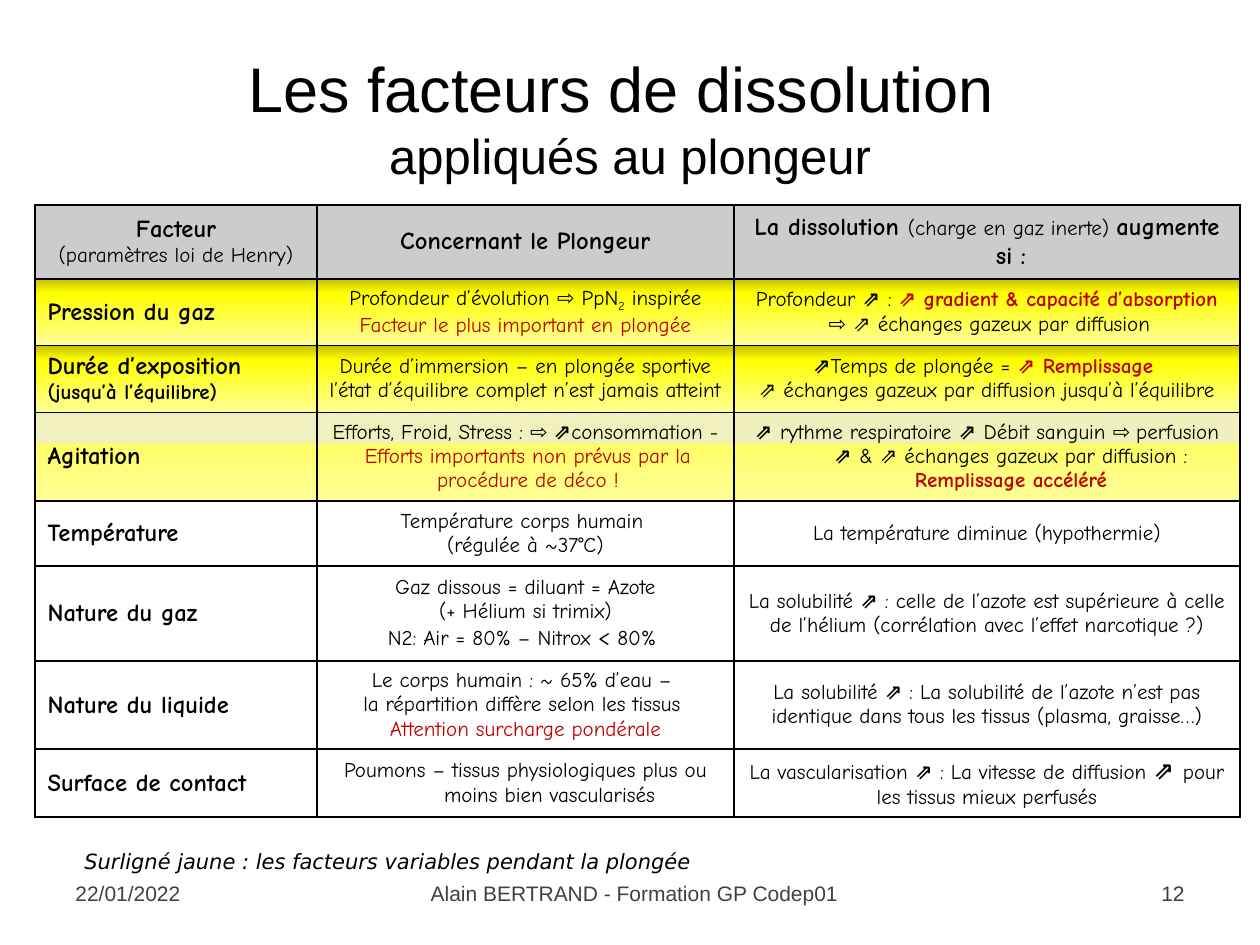
from lxml import etree
from pptx import Presentation
from pptx.dml.color import RGBColor
from pptx.enum.text import MSO_ANCHOR, PP_ALIGN
from pptx.oxml.ns import qn
from pptx.util import Pt

PX = 914400 // 126
LEFT, CENTER, RIGHT = PP_ALIGN.LEFT, PP_ALIGN.CENTER, PP_ALIGN.RIGHT
TOP, MIDDLE = MSO_ANCHOR.TOP, MSO_ANCHOR.MIDDLE

COLORS = {"text": "000000", "red": "C00000", "footer": "404040", "header": "CCCCCC"}
# Gradient stops: position %, colour, opacity %
GRADIENTS = {
    "yellow": [(0, "C6C000", 100), (22, "FFFF00", 100), (100, "FFFF99", 100)],
    "split": [(35, "DBDB57", 38), (35, "FFFF66", 100), (100, "FFFF99", 100)],
}

# Run flags: b bold, r red, a Arial, s subscript, h 14 pt
HANGING, NARROW, OUTDENT, SLIGHT, FLUSH = (48, -48), (5, -5), (0, -48), (5, -20), (0, 0)

# Rows: height, fill, then cells as (indent, paragraphs of runs)
ROWS = [
    (74, "header", [
        (HANGING, [[("Facteur", "bh")], [("(paramètres loi de Henry)", "")]]),
        (HANGING, [[("Concernant le Plongeur", "bh")]]),
        (HANGING, [[("La dissolution ", "bh"), ("(charge en gaz inerte) ", ""),
                    ("augmente si :", "bh")]]),
    ]),
    (64, "yellow", [
        (HANGING, [[("Pression du gaz", "bh")]]),
        (HANGING, [[("Profondeur d’évolution ", ""), ("⇨", "a"), (" PpN", ""),
                    ("2", "s"), (" inspirée", "")],
                   [("Facteur le plus important en plongée", "r")]]),
        (NARROW, [[("Profondeur ", ""), ("⇗ ", "b"), (": ", ""),
                   ("⇗ gradient & capacité d’absorption ", "br"), ("⇨", "a"),
                   (" ⇗ échanges gazeux par diffusion", "")]]),
    ]),
    (65, "yellow", [
        (HANGING, [[("Durée d’exposition", "bh")], [("(jusqu’à l’équilibre)", "b")]]),
        (OUTDENT, [[("Durée d’immersion – en plongée sportive l’état d’équilibre "
                     "complet n’est jamais atteint", "")]]),
        (HANGING, [[("⇗", "b"), ("Temps de plongée = ", ""), ("⇗ Remplissage ", "br")],
                   [("⇗ échanges gazeux par diffusion jusqu’à l’équilibre", "")]]),
    ]),
    (85, "split", [
        (HANGING, [[("Agitation", "bh")]]),
        (SLIGHT, [[("Efforts, Froid, Stress : ", ""), ("⇨ ", "a"), ("⇗", "b"),
                   ("consommation - ", ""),
                   ("Efforts importants non prévus par la procédure de déco !", "r")]]),
        (HANGING, [[("⇗ ", "b"), ("rythme respiratoire ", ""), ("⇗ ", "b"),
                    ("Débit sanguin ", ""), ("⇨ ", "a"), ("perfusion ", ""), ("⇗ ", "b"),
                    ("& ⇗ échanges gazeux par diffusion : ", ""),
                    ("Remplissage accéléré", "br")]]),
    ]),
    (65, None, [
        (HANGING, [[("Température", "bh")]]),
        (HANGING, [[("Température corps humain ", "")], [("(régulée à ~37°C)", "")]]),
        (HANGING, [[("La température diminue (hypothermie)", "")]]),
    ]),
    (95, None, [
        (HANGING, [[("Nature du gaz", "bh")]]),
        (HANGING, [[("Gaz dissous = diluant = Azote", "")], [("(+ Hélium si trimix)", "")],
                   [("N2: Air = 80% – Nitrox ", ""), ("<", "h"), (" 80% ", "")]]),
        (FLUSH, [[("La solubilité ", ""), ("⇗", "b"),
                  (" : celle de l’azote est supérieure à celle de l’hélium "
                   "(corrélation avec l’effet narcotique ?)", "")]]),
    ]),
    (88, None, [
        (HANGING, [[("Nature du liquide", "bh")]]),
        (HANGING, [[("Le corps humain : ~ 65% d’eau – ", "")],
                   [("la répartition diffère selon les tissus ", "")],
                   [("Attention surcharge pondérale", "r")]]),
        (FLUSH, [[("La solubilité ", ""), ("⇗", "b"),
                  (" : La solubilité de l’azote n’est pas identique dans tous les tissus "
                   "(plasma, graisse…)", "")]]),
    ]),
    (68, None, [
        (HANGING, [[("Surface de contact", "bh")]]),
        (HANGING, [[("Poumons – tissus physiologiques plus ou moins bien vascularisés", "")]]),
        (FLUSH, [[("La vascularisation ", ""), ("⇗ ", "b"), (": La vitesse de diffusion ", ""),
                  ("⇗ ", "bh"), ("pour les tissus mieux perfusés", "")]]),
    ]),
]
TABLE_LEFT, TABLE_TOP = 35, 205
COLUMNS = [282, 417, 506]

TITLE = [("Les facteurs de dissolution ", 36), ("appliqués au plongeur", 28)]
CAPTION = "Surligné jaune : les facteurs variables pendant la plongée"
# Footer: left, width, text, alignment
FOOTER_TOP, FOOTER_HEIGHT = 861, 65
FOOTERS = [
    (63, 294, "22/01/2022", LEFT),
    (372, 525, "Alain BERTRAND - Formation GP Codep01", CENTER),
    (903, 294, "12", RIGHT),
]


def add_span(para, text, size, font, color="text", bold=False, italic=False):
    span = para.add_run()
    span.text = text
    span.font.size, span.font.name = Pt(size), font
    span.font.bold, span.font.italic = bold, italic
    span.font.color.rgb = RGBColor.from_string(COLORS[color])
    return span


def add_box(slide, left, top, width, height, anchor=MIDDLE, align=LEFT, wrap=True):
    box = slide.shapes.add_textbox(left * PX, top * PX, width * PX, height * PX)
    box.text_frame.word_wrap = wrap
    box.text_frame.vertical_anchor = anchor
    para = box.text_frame.paragraphs[0]
    para.alignment = align
    return para


def add_child(parent, tag, **attributes):
    return etree.SubElement(parent, qn(tag), attributes)


def add_color(parent, color, opacity=100):
    node = add_child(add_child(parent, "a:solidFill") if parent.tag != qn("a:gs") else parent,
                     "a:srgbClr", val=color)
    if opacity < 100:
        add_child(node, "a:alpha", val=str(opacity * 1000))


def style_cell(cell, fill):
    properties = cell._tc.get_or_add_tcPr()
    for side in "LRTB":
        add_color(add_child(properties, f"a:ln{side}", w=str(Pt(1))), COLORS["text"])
    if fill in GRADIENTS:
        gradient = add_child(properties, "a:gradFill", rotWithShape="1")
        stops = add_child(gradient, "a:gsLst")
        for position, color, opacity in GRADIENTS[fill]:
            add_color(add_child(stops, "a:gs", pos=str(position * 1000)), color, opacity)
        add_child(gradient, "a:lin", ang="5400000", scaled="0")
    elif fill:
        cell.fill.solid()
        cell.fill.fore_color.rgb = RGBColor.from_string(COLORS[fill])
    else:
        cell.fill.background()


def fill_cell(cell, indent, paragraphs, align):
    cell.vertical_anchor = MIDDLE
    for index, runs in enumerate(paragraphs):
        frame = cell.text_frame
        para = frame.add_paragraph() if index else frame.paragraphs[0]
        para.alignment = align
        properties = para._p.get_or_add_pPr()
        for name, value in zip(("marL", "indent"), indent):
            properties.set(name, str(value * PX))
        for text, flags in runs:
            span = add_span(para, text, 14 if "h" in flags else 12,
                            "Arial" if "a" in flags else "Comic Neue",
                            "red" if "r" in flags else "text", "b" in flags)
            if "s" in flags:
                span._r.get_or_add_rPr().set("baseline", "-25000")


deck = Presentation()
deck.slide_width, deck.slide_height = 1260 * PX, 945 * PX
slide = deck.slides.add_slide(deck.slide_layouts[6])

# Title
para = add_box(slide, 63, 38, 1134, 158, align=CENTER)
for index, (text, size) in enumerate(TITLE):
    if index:
        para.add_line_break()
    add_span(para, text, size, "Arial")

# Table of factors
table = slide.shapes.add_table(
    len(ROWS), len(COLUMNS), TABLE_LEFT * PX, TABLE_TOP * PX,
    sum(COLUMNS) * PX, sum(row[0] for row in ROWS) * PX).table
table.first_row = table.horz_banding = False
for column, width in zip(table.columns, COLUMNS):
    column.width = width * PX
for r, (height, fill, cells) in enumerate(ROWS):
    table.rows[r].height = height * PX
    for c, (indent, paragraphs) in enumerate(cells):
        cell = table.cell(r, c)
        style_cell(cell, fill)
        fill_cell(cell, indent, paragraphs, LEFT if r and not c else CENTER)

# Caption and footer
para = add_box(slide, 72, 842, 644, 38, anchor=TOP, wrap=False)
add_span(para, CAPTION, 12, "DejaVu Sans", italic=True)
for left, width, text, align in FOOTERS:
    para = add_box(slide, left, FOOTER_TOP, width, FOOTER_HEIGHT, align=align)
    add_span(para, text, 12, "Arial", "footer")

deck.save("out.pptx")
